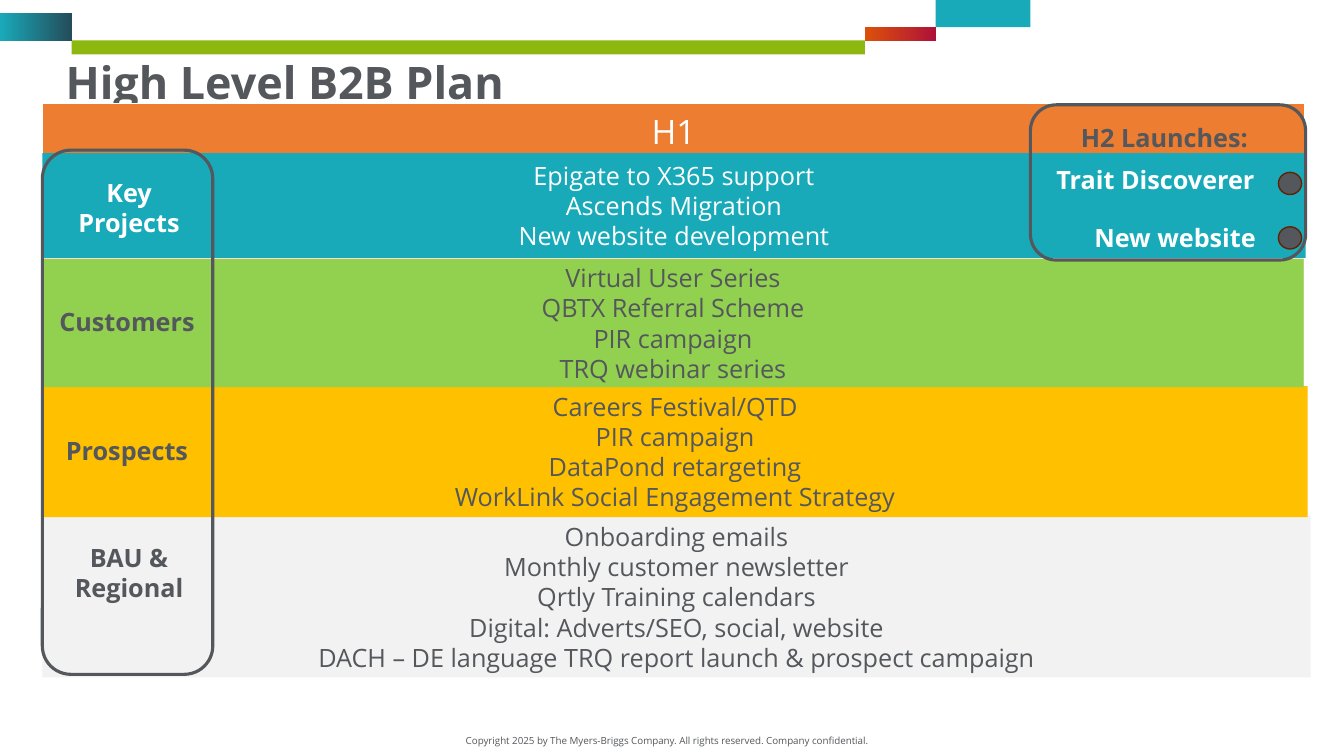
from pptx import Presentation
from pptx import util as u
from pptx.dml.color import RGBColor
from pptx.enum import shapes, text

COLORS = {
    "ink": "54575B", "white": "FFFFFF", "teal": "19AABA", "navy": "244C5A",
    "lime": "8CB80F", "rust": "DC500A", "crimson": "AE1237", "orange": "ED7D31",
    "peach": "FDDAC9", "green": "92D050", "amber": "FFC000", "gray": "F2F2F2",
    "brown": "602304",
}
COLORS = {name: RGBColor.from_string(value) for name, value in COLORS.items()}
SHAPE = shapes.MSO_SHAPE

presentation = Presentation()
presentation.slide_width = u.Inches(13.33)
presentation.slide_height = u.Inches(7.5)
slide = presentation.slides.add_slide(presentation.slide_layouts[5])


def add_box(kind, box, fill=None, line=None, width=1):
    """Add a preset shape; fill is None, one colour name or a pair for a gradient."""
    shape = slide.shapes.add_shape(kind, *map(u.Inches, box))
    shape.shadow.inherit = False
    if fill is None:
        shape.fill.background()
    elif isinstance(fill, tuple):
        shape.fill.gradient()
        shape.fill.gradient_angle = 0
        for stop, name in zip(shape.fill.gradient_stops, fill):
            stop.color.rgb = COLORS[name]
    else:
        shape.fill.solid()
        shape.fill.fore_color.rgb = COLORS[fill]
    if line:
        shape.line.color.rgb = COLORS[line]
        shape.line.width = u.Pt(width)
    else:
        shape.line.fill.background()
    return shape


def write(frame, words, size=18, color="ink", bold=False, align=text.PP_ALIGN.CENTER):
    frame.word_wrap = True
    frame.text = words
    for paragraph in frame.paragraphs:
        paragraph.alignment = align
        for run in paragraph.runs:
            run.font.name = "Open Sans"
            run.font.size = u.Pt(size)
            run.font.bold = bold
            run.font.color.rgb = COLORS[color]


# Header ribbon
for box, fill in [
    ((0.71, 0.4, 7.87, 0.14), "lime"),
    ((0, 0.13, 0.71, 0.28), ("teal", "navy")),
    ((9.28, 0, 0.94, 0.27), "teal"),
    ((8.58, 0.27, 0.7, 0.14), ("rust", "crimson")),
]:
    add_box(SHAPE.RECTANGLE, box, fill)

title = slide.shapes.title
title.left, title.top, title.width, title.height = map(u.Inches, (0.55, 0.55, 11.3, 0.99))
write(title.text_frame, "High Level B2B Plan", 32, bold=True, align=text.PP_ALIGN.LEFT)
title.text_frame.vertical_anchor = text.MSO_ANCHOR.TOP
title.text_frame.auto_size = text.MSO_AUTO_SIZE.NONE
title.text_frame.paragraphs[0].line_spacing = 0.9

# Plan table with the half-year heading
row_heights = [0.55, 0.92, 1.28, 1.39, 1.51]
plan = slide.shapes.add_table(
    len(row_heights), 1, *map(u.Inches, (0.42, 1.03, 12.52, sum(row_heights)))).table
for row, height in zip(plan.rows, row_heights):
    row.height = u.Inches(height)
    row.cells[0].fill.solid()
    row.cells[0].fill.fore_color.rgb = COLORS["peach"]
heading = plan.cell(0, 0)
heading.fill.fore_color.rgb = COLORS["orange"]
write(heading.text_frame, "H1", 24, "white")

# Activity bands: top, width, height, fill, text colour, lines
bands = [
    (5.12, 12.58, 1.6, "gray", "ink", [
        "Onboarding emails", "Monthly customer newsletter", "Qrtly Training calendars",
        "Digital: Adverts/SEO, social, website",
        "DACH – DE language TRQ report launch & prospect campaign"]),
    (3.83, 12.55, 1.3, "amber", "ink", [
        "Careers Festival/QTD", "PIR campaign", "DataPond retargeting",
        "WorkLink Social Engagement Strategy"]),
    (2.57, 12.51, 1.27, "green", "ink", [
        "Virtual User Series", "QBTX Referral Scheme", "PIR campaign",
        "TRQ webinar series"]),
    (1.52, 12.53, 1.04, "teal", "white", [
        "Epigate to X365 support", "Ascends Migration", "New website development"]),
]
for top, width, height, fill, color, lines in bands:
    band = add_box(SHAPE.RECTANGLE, (0.42, top, width, height), fill)
    write(band.text_frame, "\n".join(lines), color=color)
    band.text_frame.vertical_anchor = text.MSO_ANCHOR.MIDDLE

# Outlines around the row names and the launches
add_box(SHAPE.ROUNDED_RECTANGLE, (0.42, 1.49, 1.69, 5.2), line="ink", width=2.25)
launches = add_box(SHAPE.ROUNDED_RECTANGLE, (10.22, 1.04, 2.73, 1.54), line="ink", width=2.25)
write(launches.text_frame, "H2 Launches:", bold=True)
launches.text_frame.vertical_anchor = text.MSO_ANCHOR.TOP
launches.text_frame.margin_top = u.Inches(0.1)
launches.text_frame.margin_right = u.Inches(0.17)

for top in (1.71, 2.25):
    add_box(SHAPE.OVAL, (12.68, top, 0.23, 0.22), "ink", "brown")

# Labels: box, words, colour, size, bold
for box, words, color, size, bold in [
    ((0.43, 1.71, 1.7, 0.71), "Key Projects", "white", 18, True),
    ((0.41, 2.99, 1.7, 0.4), "Customers", "ink", 18, True),
    ((0.41, 4.27, 1.7, 0.4), "Prospects", "ink", 18, True),
    ((0.49, 5.33, 1.58, 0.71), "BAU & Regional", "ink", 18, True),
    ((10.12, 1.58, 2.68, 0.4), "Trait Discoverer", "white", 18, True),
    ((10.6, 2.16, 2.11, 0.4), "New website", "white", 18, True),
    ((4.46, 7.24, 4.31, 0.22), "Copyright 2025 by The Myers-Briggs Company. "
     "All rights reserved. Company confidential.", "ink", 7, False),
]:
    label = slide.shapes.add_textbox(*map(u.Inches, box))
    write(label.text_frame, words, size, color, bold)

presentation.save("out.pptx")
